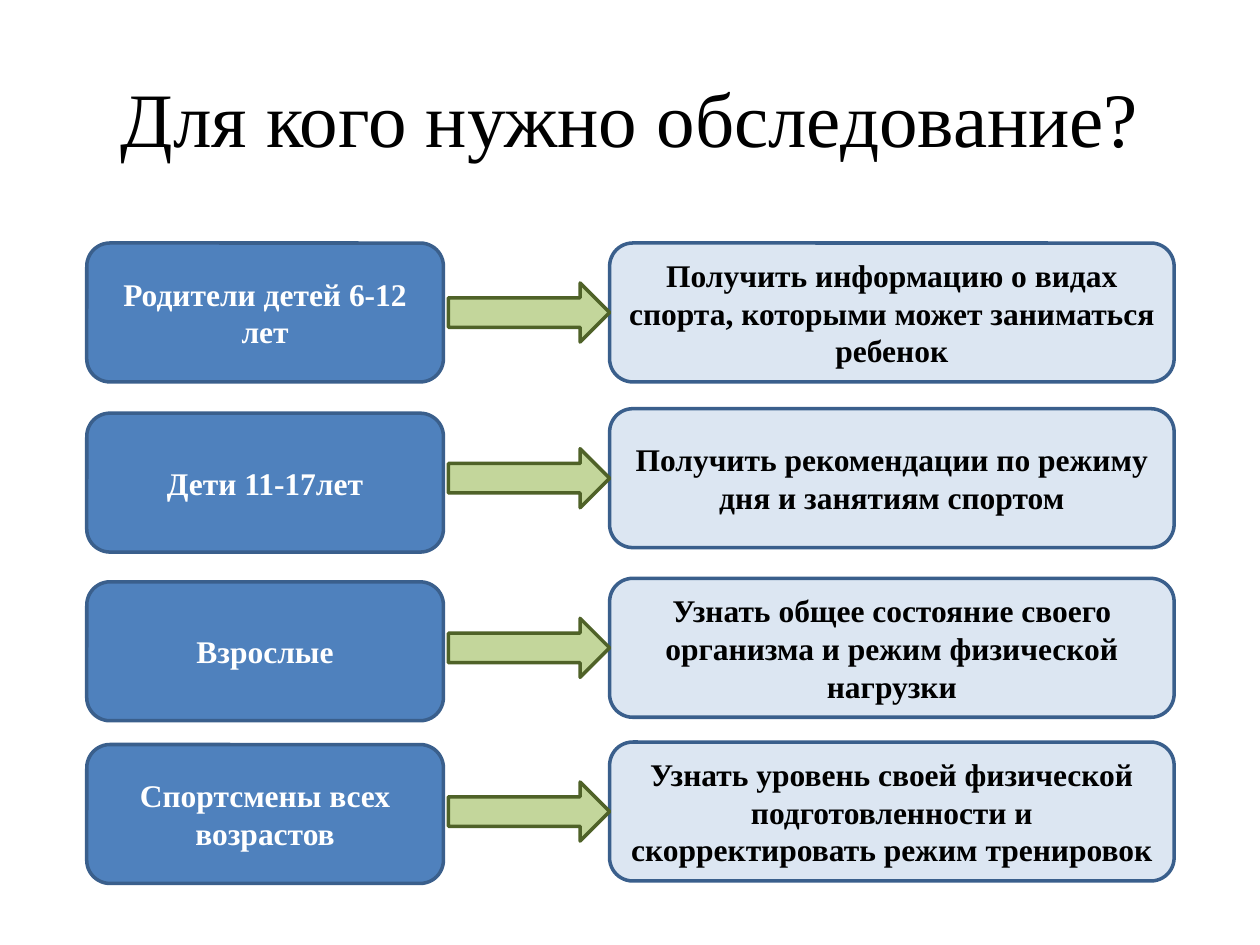
from dataclasses import dataclass

import pptx
import pptx.dml.color
import pptx.enum.shapes
import pptx.enum.text
import pptx.util
from pptx.util import Cm


@dataclass(frozen=True)
class Theme:
    """Colours, type sizes and line width of the slide."""
    font: str = "Times New Roman"
    title_size: int = 44
    card_size: int = 18
    line_width: int = 2
    dark_text: str = "000000"
    light_text: str = "FFFFFF"
    audience_fill: str = "4F81BD"
    goal_fill: str = "DCE6F2"
    card_line: str = "3A5F8C"
    arrow_fill: str = "C3D69B"
    arrow_line: str = "4F6228"


THEME = Theme()
ROW_LEFT, ROW_WIDTH, CARD_HEIGHT = Cm(1.75), Cm(21.92), Cm(2.8)
ROWS = [
    ("Родители детей 6-12 лет",
     "Получить информацию о видах спорта, которыми может заниматься ребенок",
     Cm(4.9), Cm(4.9)),
    ("Дети 11-17лет",
     "Получить рекомендации по режиму дня и занятиям спортом",
     Cm(8.33), Cm(8.24)),
    ("Взрослые",
     "Узнать общее состояние своего организма и режим физической нагрузки",
     Cm(11.73), Cm(11.66)),
    ("Спортсмены всех возрастов",
     "Узнать уровень своей физической подготовленности и скорректировать режим тренировок",
     Cm(15.01), Cm(14.96)),
]


def rgb(value):
    """Turn a hex string into a colour."""
    return pptx.dml.color.RGBColor.from_string(value)


def write_text(frame, text, *, size, color, bold=False):
    """Write centred text in the middle of a text frame."""
    frame.word_wrap = True
    frame.vertical_anchor = pptx.enum.text.MSO_ANCHOR.MIDDLE
    paragraph = frame.paragraphs[0]
    paragraph.alignment = pptx.enum.text.PP_ALIGN.CENTER
    run = paragraph.add_run()
    run.text = text
    run.font.name = THEME.font
    run.font.size = pptx.util.Pt(size)
    run.font.bold = bold
    run.font.color.rgb = rgb(color)


def add_outlined(slide, preset, box, fill, line):
    """Add a flat preset shape with a solid fill and an outline."""
    shape = slide.shapes.add_shape(preset, *box)
    shape.shadow.inherit = False
    shape.fill.solid()
    shape.fill.fore_color.rgb = rgb(fill)
    shape.line.color.rgb = rgb(line)
    shape.line.width = pptx.util.Pt(THEME.line_width)
    return shape


def add_card(slide, box, text, fill, color):
    """Add a rounded card with bold text."""
    card = add_outlined(slide, pptx.enum.shapes.MSO_SHAPE.ROUNDED_RECTANGLE,
                        box, fill, THEME.card_line)
    write_text(card.text_frame, text, size=THEME.card_size, color=color, bold=True)


def add_arrow(slide, box):
    """Add a down arrow turned to point right and fill the given box."""
    left, top, width, height = box
    turned = (left + (width - height) // 2, top + (height - width) // 2, height, width)
    arrow = add_outlined(slide, pptx.enum.shapes.MSO_SHAPE.DOWN_ARROW,
                         turned, THEME.arrow_fill, THEME.arrow_line)
    arrow.rotation = 270


def add_title(slide, box, text):
    """Place and fill the title placeholder."""
    title = slide.shapes.title
    title.left, title.top, title.width, title.height = box
    write_text(title.text_frame, text, size=THEME.title_size, color=THEME.dark_text)


def add_row(slide, box, audience, goal, audience_drop):
    """Link an audience card to its goal card inside the given box."""
    left, top, width, height = box
    audience_width, goal_width = Cm(7.19), Cm(11.38)
    arrow_length, arrow_thickness = Cm(3.25), Cm(1.19)
    goal_left = left + width - goal_width
    add_card(slide, (left, top + audience_drop, audience_width, height),
             audience, THEME.audience_fill, THEME.light_text)
    add_card(slide, (goal_left, top, goal_width, height),
             goal, THEME.goal_fill, THEME.dark_text)
    add_arrow(slide, (goal_left - arrow_length, top + (height - arrow_thickness) // 2,
                      arrow_length, arrow_thickness))


def main():
    """Build the slide and save it."""
    deck = pptx.Presentation()
    deck.slide_width, deck.slide_height = Cm(25.4), Cm(19.05)
    slide = deck.slides.add_slide(deck.slide_layouts[5])
    add_title(slide, (Cm(1.27), Cm(0.76), Cm(22.86), Cm(3.18)),
              "Для кого нужно обследование?")
    for audience, goal, audience_top, goal_top in ROWS:
        add_row(slide, (ROW_LEFT, goal_top, ROW_WIDTH, CARD_HEIGHT),
                audience, goal, audience_top - goal_top)
    deck.save("out.pptx")


if __name__ == "__main__":
    main()
